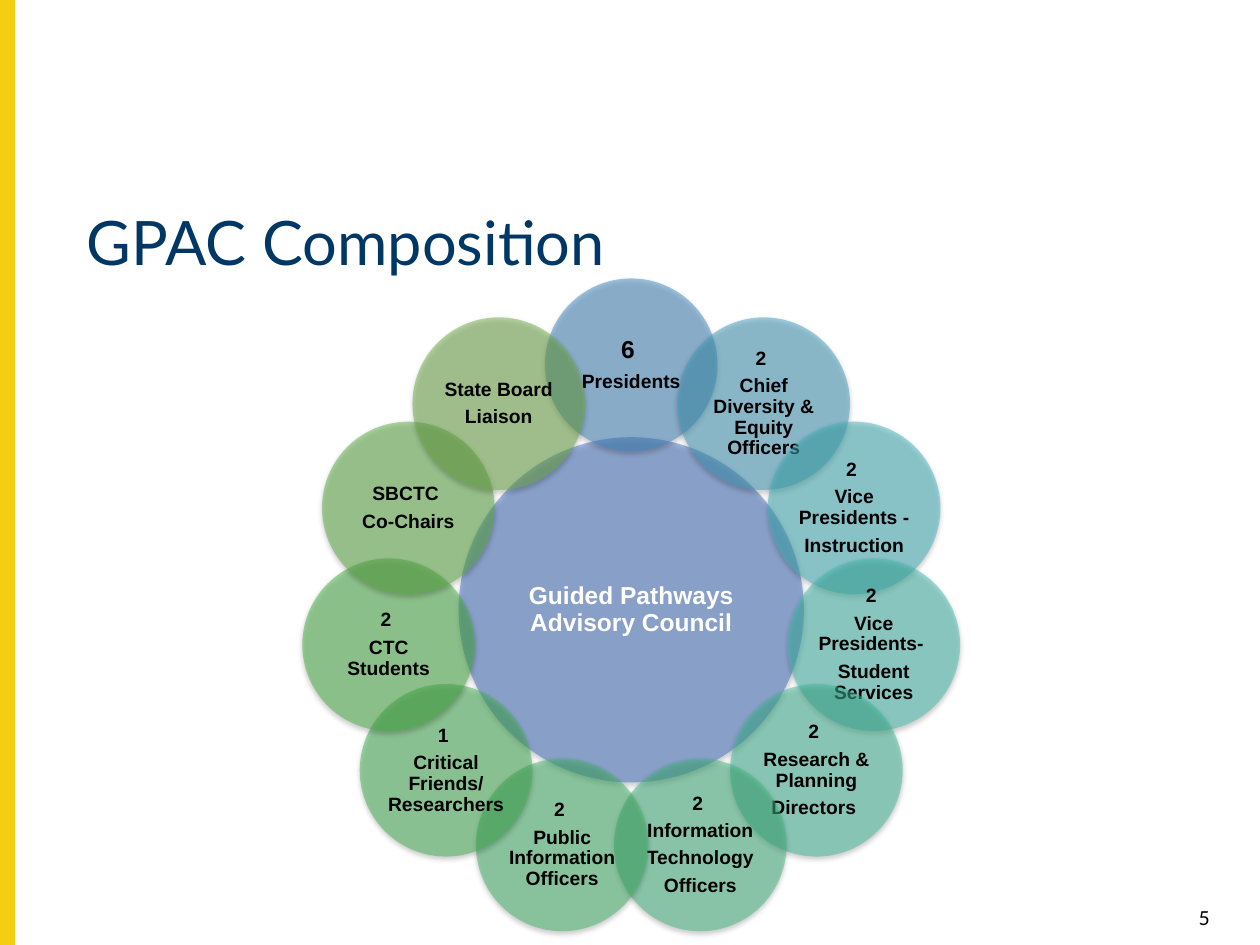
import math
from lxml import etree
from pptx import Presentation
from pptx import util as u
from pptx.dml.color import RGBColor
from pptx.enum import shapes, text
from pptx.oxml import ns

COLORS = {"bar": "F4CE12", "title": "003764", "black": "000000",
          "white": "FFFFFF", "hub": "4472C4"}
TITLE = "GPAC Composition"
PAGE = "5"
HUB = "Guided Pathways Advisory Council"
# Clockwise from the top: fill, lines of the label
MEMBERS = [
    ("4489C2", ["6 ", "Presidents"]),
    ("449FC1", ["2 ", "Chief Diversity & Equity Officers"]),
    ("43B5BF", ["2 ", "Vice Presidents -", "Instruction"]),
    ("43BEB1", ["2 ", "Vice Presidents- ", "Student Services"]),
    ("43BC99", ["2 ", "Research & Planning", "Directors "]),
    ("44B982", ["2 ", "Information", "Technology", "Officers"]),
    ("44B76B", ["2 ", "Public Information Officers"]),
    ("45B456", ["1 ", "Critical Friends/ Researchers"]),
    ("49B246", ["2 ", "CTC Students"]),
    ("5DAF46", ["SBCTC ", "Co-Chairs"]),
    ("70AD47", ["State Board", "Liaison"]),
]
CENTER = (5.01, 4.84)
RING_RADIUS = 1.945
HUB_SIZE, MEMBER_SIZE = 2.74, 1.37
LABEL_RATIO = math.sqrt(0.5)  # square inscribed in a circle


def add_text(slide, box, lines, sizes, color, font="Arial", bold=False,
             align=text.PP_ALIGN.CENTER, anchor=text.MSO_ANCHOR.MIDDLE,
             insets=(0.02, 0.02), line_spacing=0.9, after=0.35):
    """Add one paragraph per line; after is a share of the font size."""
    tf = slide.shapes.add_textbox(*map(u.Inches, box)).text_frame
    tf.word_wrap = True
    tf.vertical_anchor = anchor
    tf.margin_left = tf.margin_right = u.Inches(insets[0])
    tf.margin_top = tf.margin_bottom = u.Inches(insets[1])
    for i, (line, size) in enumerate(zip(lines, sizes)):
        p = tf.paragraphs[0] if i == 0 else tf.add_paragraph()
        p.alignment = align
        p.line_spacing = line_spacing
        p.space_after = u.Pt(after * size)
        r = p.add_run()
        r.text = line
        r.font.name, r.font.size, r.font.bold = font, u.Pt(size), bold
        r.font.color.rgb = RGBColor.from_string(color)


def add_shadow(sp):
    effects = etree.SubElement(sp._element.spPr, ns.qn("a:effectLst"))
    shadow = etree.SubElement(effects, ns.qn("a:outerShdw"), blurRad=str(u.Pt(3.1)),
                              dist=str(u.Pt(1.6)), dir="5400000", rotWithShape="0")
    clr = etree.SubElement(shadow, ns.qn("a:srgbClr"), val=COLORS["black"])
    etree.SubElement(clr, ns.qn("a:alpha"), val="38000")


def add_circle(slide, cx, cy, size, fill, lines, sizes, color):
    """Add a half-transparent circle with its label in the inscribed square."""
    def square(side):
        return cx - side / 2, cy - side / 2, side, side

    sp = slide.shapes.add_shape(shapes.MSO_SHAPE.OVAL, *map(u.Inches, square(size)))
    sp.fill.solid()
    sp.fill.fore_color.rgb = RGBColor.from_string(fill)
    clr = sp._element.spPr.find(".//" + ns.qn("a:srgbClr"))
    etree.SubElement(clr, ns.qn("a:alpha"), val="50000")
    sp.line.fill.background()
    add_shadow(sp)
    add_text(slide, square(size * LABEL_RATIO), lines, sizes, color, bold=True)


def main():
    prs = Presentation()
    prs.slide_width, prs.slide_height = u.Inches(10), u.Inches(7.5)
    s = prs.slides.add_slide(prs.slide_layouts[6])

    bar = s.shapes.add_shape(shapes.MSO_SHAPE.RECTANGLE, 0, 0, u.Inches(0.11), prs.slide_height)
    bar.shadow.inherit = False
    bar.fill.solid()
    bar.fill.fore_color.rgb = bar.line.color.rgb = RGBColor.from_string(COLORS["bar"])
    bar.line.width = u.Pt(1)

    add_text(s, (0.59, 1.59, 9.08, 0.86), [TITLE], [35], COLORS["title"], font="Lato",
             align=text.PP_ALIGN.LEFT, anchor=text.MSO_ANCHOR.TOP,
             insets=(0.1, 0.1), after=0)
    add_text(s, (9.2, 7.14, 0.5, 0.21), [PAGE], [11], COLORS["black"], font="Lato",
             align=text.PP_ALIGN.RIGHT, anchor=text.MSO_ANCHOR.TOP,
             insets=(0.1, 0.05), line_spacing=1, after=0)

    add_circle(s, *CENTER, HUB_SIZE, COLORS["hub"], [HUB], [14], COLORS["white"])
    for i, (fill, lines) in enumerate(MEMBERS):
        angle = 2 * math.pi * i / len(MEMBERS)
        cx = CENTER[0] + RING_RADIUS * math.sin(angle)
        cy = CENTER[1] - RING_RADIUS * math.cos(angle)
        sizes = [14 if i == 0 else 11] + [11] * (len(lines) - 1)
        add_circle(s, cx, cy, MEMBER_SIZE, fill, lines, sizes, COLORS["black"])

    prs.save("out.pptx")


if __name__ == "__main__":
    main()
